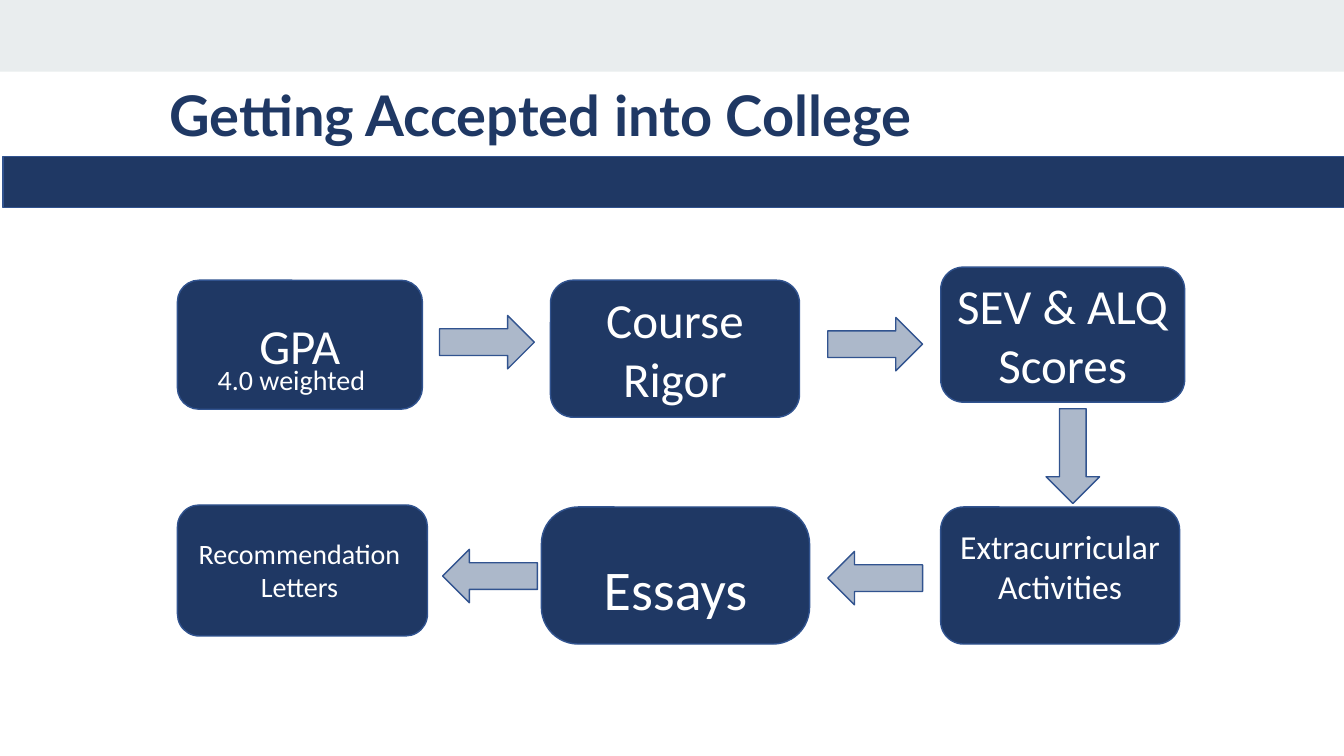
from dataclasses import dataclass

from pptx import Presentation
from pptx.dml.color import RGBColor
from pptx.enum.shapes import MSO_SHAPE
from pptx.enum.text import MSO_ANCHOR, PP_ALIGN
from pptx.shapes.autoshape import Shape
from pptx.slide import Slide
from pptx.util import Inches, Pt

NAVY = RGBColor(0x1F, 0x38, 0x64)
OUTLINE = RGBColor(0x31, 0x53, 0x8F)
ARROW_GREY = RGBColor(0xAC, 0xB8, 0xCA)
BAND_GREY = RGBColor(0xE9, 0xED, 0xEE)
WHITE = RGBColor(0xFF, 0xFF, 0xFF)

RECT = MSO_SHAPE.RECTANGLE
ROUNDED = MSO_SHAPE.ROUNDED_RECTANGLE
RIGHT_ARROW = MSO_SHAPE.RIGHT_ARROW
LEFT, CENTER = PP_ALIGN.LEFT, PP_ALIGN.CENTER
TOP, MIDDLE = MSO_ANCHOR.TOP, MSO_ANCHOR.MIDDLE

SLIDE_W, SLIDE_H = 13.33, 7.5
ARROW_W, ARROW_H = 0.94, 0.53


@dataclass(frozen=True)
class Box:
    left: float
    top: float
    width: float
    height: float


@dataclass(frozen=True)
class Step:
    box: Box
    text: str = ""
    size: int = 35
    corner: float = 0.167
    inset_top: float = 0.05
    inset_bottom: float = 0.05


@dataclass(frozen=True)
class Arrow:
    left: float
    top: float
    rotation: int = 0


@dataclass(frozen=True)
class Label:
    box: Box
    text: str
    size: int = 20
    font: str = "Calibri"
    color: RGBColor = WHITE
    bold: bool = False
    align: PP_ALIGN = CENTER
    anchor: MSO_ANCHOR = TOP
    line_spacing: float = 1.0


TITLE = Label(Box(1.58, 0.69, 10.31, 0.96), "Getting Accepted into College",
              40, "Lato", NAVY, True, LEFT, MIDDLE, 0.9)

STEPS = [
    Step(Box(1.76, 2.78, 2.43, 1.28), "GPA"),
    Step(Box(5.46, 2.78, 2.47, 1.36), "Course Rigor"),
    Step(Box(9.33, 2.65, 2.42, 1.34), "SEV & ALQ\nScores"),
    Step(Box(9.33, 5.03, 2.37, 1.36), "Extracurricular\nActivities", 24,
         inset_bottom=0.24),
    Step(Box(5.37, 5.03, 2.66, 1.36), "Essays", 40, 0.268, inset_top=0.29),
    Step(Box(1.76, 5.01, 2.48, 1.3)),
]

ARROWS = [
    Arrow(4.36, 3.13),
    Arrow(8.21, 3.15),
    Arrow(10.17, 4.26, 90),
    Arrow(8.21, 5.47, 180),
    Arrow(4.39, 5.45, 180),
]

LABELS = [
    Label(Box(2.05, 3.55, 1.68, 0.44), "4.0 weighted"),
    Label(Box(1.86, 5.27, 2.22, 0.77), "Recommendation\nLetters"),
]


def lengths(box: Box) -> list[Inches]:
    return [Inches(v) for v in (box.left, box.top, box.width, box.height)]


def write(sp: Shape, text: str, size: int, font: str = "Calibri",
          color: RGBColor = WHITE, bold: bool = False,
          align: PP_ALIGN = CENTER, anchor: MSO_ANCHOR = MIDDLE,
          line_spacing: float = 1.0) -> None:
    tf = sp.text_frame
    tf.word_wrap = True
    tf.vertical_anchor = anchor
    tf.text = text
    for p in tf.paragraphs:
        p.alignment = align
        p.line_spacing = line_spacing
        for r in p.runs:
            r.font.name = font
            r.font.size = Pt(size)
            r.font.bold = bold
            r.font.color.rgb = color


def add_shape(s: Slide, kind: MSO_SHAPE, box: Box, fill: RGBColor,
              outlined: bool = True) -> Shape:
    sp = s.shapes.add_shape(kind, *lengths(box))
    sp.shadow.inherit = False
    sp.fill.solid()
    sp.fill.fore_color.rgb = fill
    if outlined:
        sp.line.color.rgb = OUTLINE
        sp.line.width = Pt(1)
    else:
        sp.line.fill.background()
    return sp


def add_label(s: Slide, label: Label) -> None:
    sp = s.shapes.add_textbox(*lengths(label.box))
    write(sp, label.text, label.size, label.font, label.color, label.bold,
          label.align, label.anchor, label.line_spacing)


def add_step(s: Slide, step: Step) -> None:
    sp = add_shape(s, ROUNDED, step.box, NAVY)
    sp.adjustments[0] = step.corner
    if step.text:
        write(sp, step.text, step.size)
        sp.text_frame.margin_top = Inches(step.inset_top)
        sp.text_frame.margin_bottom = Inches(step.inset_bottom)


def add_arrow(s: Slide, arrow: Arrow) -> None:
    box = Box(arrow.left, arrow.top, ARROW_W, ARROW_H)
    sp = add_shape(s, RIGHT_ARROW, box, ARROW_GREY)
    sp.rotation = arrow.rotation


def main() -> None:
    prs = Presentation()
    prs.slide_width, prs.slide_height = Inches(SLIDE_W), Inches(SLIDE_H)
    s = prs.slides.add_slide(prs.slide_layouts[6])

    add_shape(s, RECT, Box(0, 0, SLIDE_W, 0.71), BAND_GREY, outlined=False)
    add_label(s, TITLE)
    add_shape(s, RECT, Box(0.03, 1.55, SLIDE_W, 0.51), NAVY)
    for step in STEPS:
        add_step(s, step)
    for arrow in ARROWS:
        add_arrow(s, arrow)
    for label in LABELS:
        add_label(s, label)

    prs.save("out.pptx")


if __name__ == "__main__":
    main()
